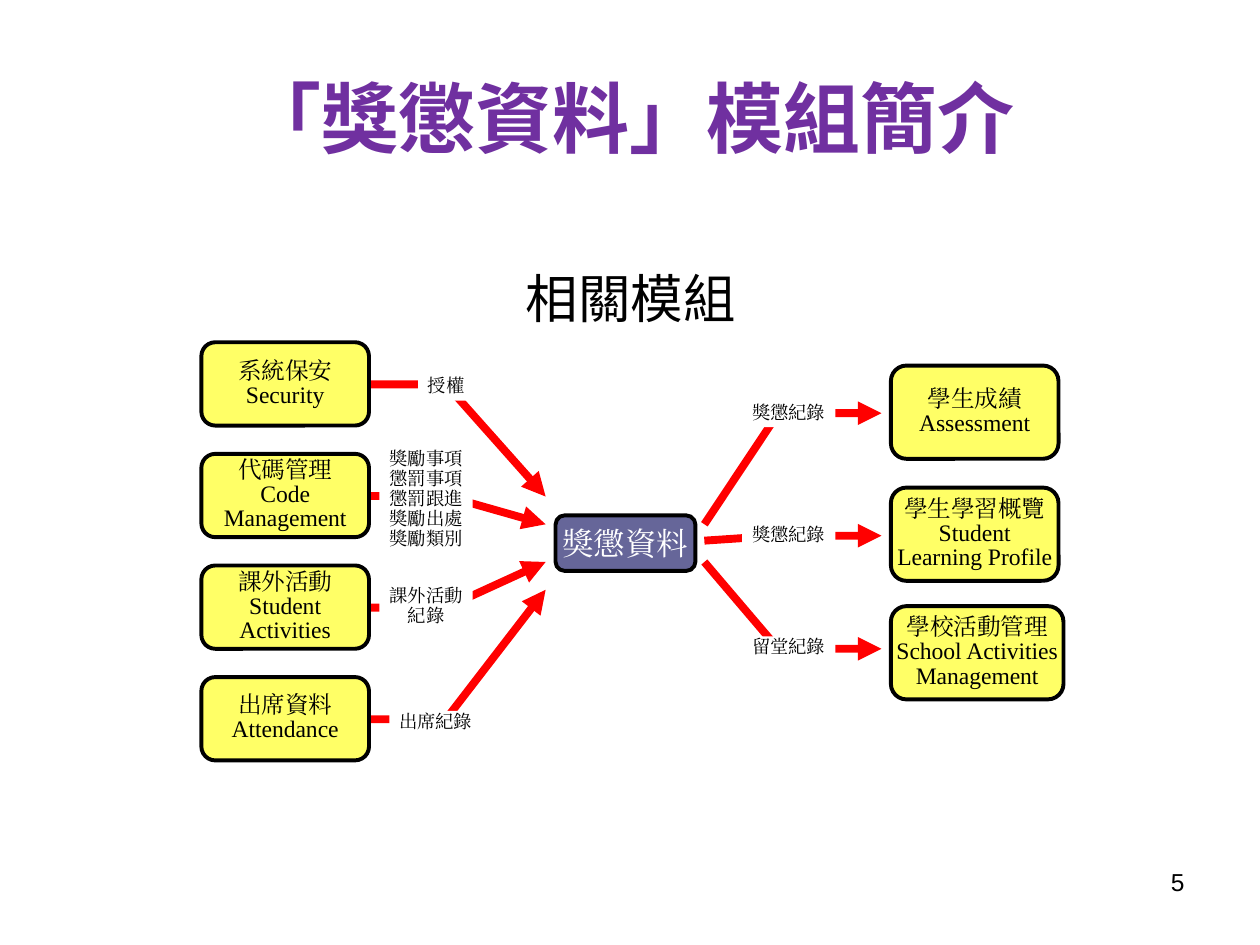
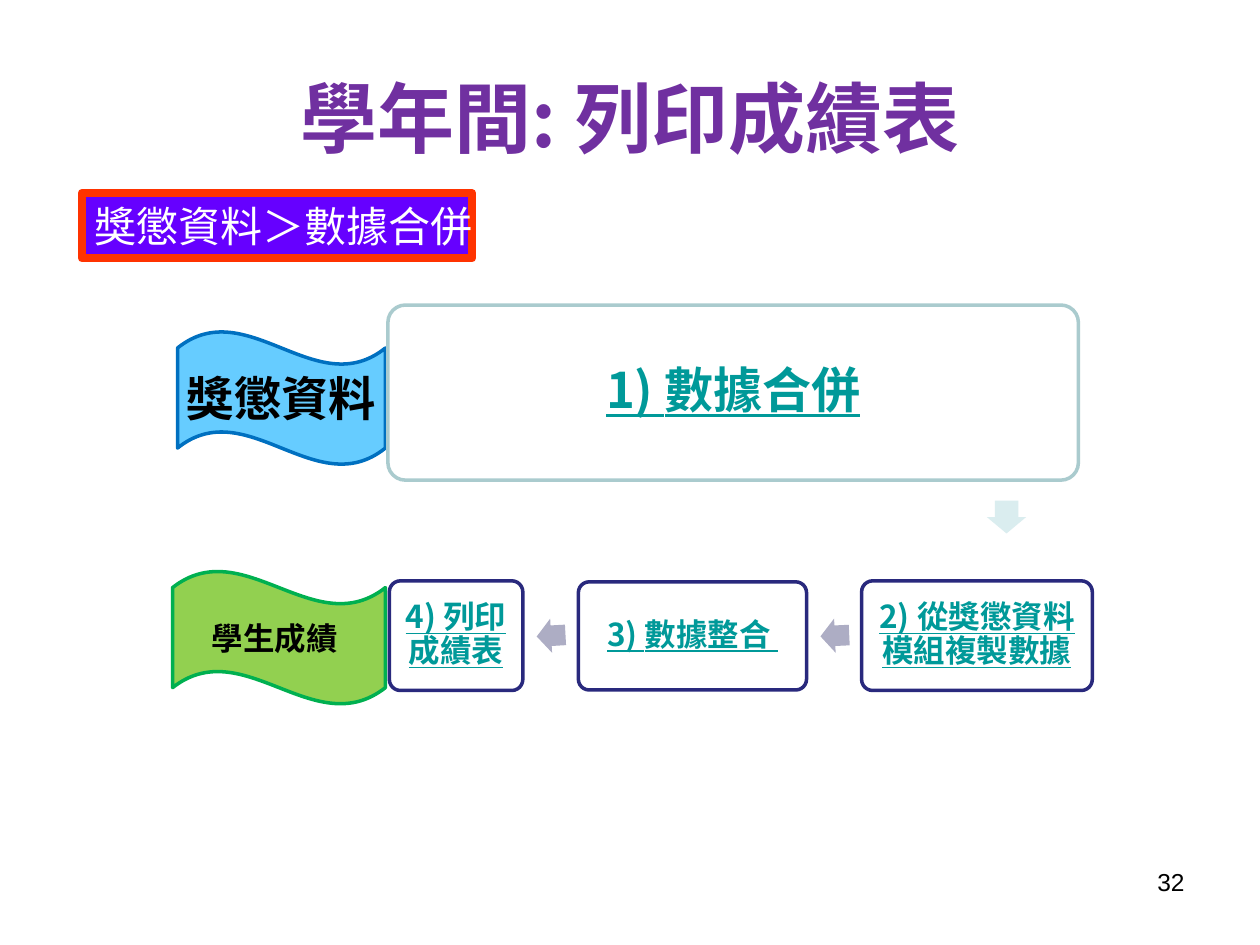
import pptx
import pptx.dml.color
import pptx.enum.shapes
import pptx.enum.text
import pptx.oxml
import pptx.oxml.ns
import pptx.util

Cm = pptx.util.Cm
Pt = pptx.util.Pt
RGB = pptx.dml.color.RGBColor.from_string
PRESET = pptx.enum.shapes.MSO_SHAPE
ALIGN = pptx.enum.text.PP_ALIGN
ANCHOR = pptx.enum.text.MSO_ANCHOR

COLORS = {
    "black": "000000", "white": "FFFFFF", "title": "7030A0", "arrow": "FF0000",
    "module": "FFFF66", "hub": "666699", "banner": "6600FF", "banner_edge": "FF3300",
    "sky": "66CCFF", "sky_edge": "0070C0", "green": "92D050", "green_edge": "00B050",
    "panel_edge": "AACBCE", "step_edge": "29297D", "link": "009999",
    "step_arrow": "ADADC4", "down_arrow": "DAEDEF",
}
SANS = "Noto Sans CJK SC"
SANS_TC = "Noto Sans CJK TC"
SERIF = "Times New Roman"


def write(shape, text, size, font=SERIF, color="black", align=ALIGN.CENTER,
          anchor=ANCHOR.TOP, inset=(0.18, 0.1), spacing=1.0, bold=False,
          underline=False, wrap=True):
    frame = shape.text_frame
    frame.word_wrap = wrap
    frame.vertical_anchor = anchor
    frame.margin_left = frame.margin_right = Cm(inset[0])
    frame.margin_top = frame.margin_bottom = Cm(inset[1])
    for index, line in enumerate(text.split("\n")):
        paragraph = frame.paragraphs[0] if index == 0 else frame.add_paragraph()
        paragraph.alignment = align
        paragraph.line_spacing = spacing
        run = paragraph.add_run()
        run.text = line
        run.font.name = font
        run.font.size = Pt(size)
        run.font.bold = bold
        run.font.underline = underline
        run.font.color.rgb = RGB(COLORS[color])
        east_asian = pptx.oxml.parse_xml(
            f'<a:ea {pptx.oxml.ns.nsdecls("a")} typeface="{font}"/>')
        run.font._element.find(pptx.oxml.ns.qn("a:latin")).addnext(east_asian)


def draw(slide, preset, box, fill, edge=None, weight=2.25, adjust=(), rotation=0):
    shape = slide.shapes.add_shape(preset, *map(Cm, box))
    shape.shadow.inherit = False
    shape.fill.solid()
    shape.fill.fore_color.rgb = RGB(COLORS[fill])
    if edge:
        shape.line.color.rgb = RGB(COLORS[edge])
        shape.line.width = Pt(weight)
    else:
        shape.line.fill.background()
    for index, value in enumerate(adjust):
        shape.adjustments[index] = value
    shape.rotation = rotation
    return shape


deck = pptx.Presentation()
deck.slide_width, deck.slide_height = Cm(25.4), Cm(19.05)

slides = []
for heading, number in [("「獎懲資料」模組簡介", "5"), ("學年間: 列印成績表", "32")]:
    slide = deck.slides.add_slide(deck.slide_layouts[6])
    title = slide.shapes.add_textbox(Cm(1.27), Cm(0.76), Cm(22.86), Cm(3.18))
    write(title, heading, 44, font=SANS, color="title", bold=True,
          anchor=ANCHOR.MIDDLE, inset=(0.25, 0.13))
    page = slide.shapes.add_textbox(Cm(18.21), Cm(17.35), Cm(5.92), Cm(1.32))
    write(page, number, 14, font="Arial", align=ALIGN.RIGHT, inset=(0.25, 0.13))
    slides.append(slide)
overview, report = slides

subtitle = overview.shapes.add_textbox(Cm(3.56), Cm(5.26), Cm(18.31), Cm(1.47))
write(subtitle, "相關模組", 30, font="Roboto")

source_tops = [6.9 + 2.25 * row for row in range(4)]
flows = [[(6.15, top + 0.85), (8.99, top + 0.85), (11, hub_y)]
         for top, hub_y in zip(source_tops, [10.01, 10.57, 11.33, 11.89])]
flows += [[(14.2, hub_y), (15.69, y), (17.77, y)]
          for hub_y, y in [(10.57, 8.33), (10.9, 10.8), (11.33, 13.08)]]
for flow in flows:
    start, *rest = [(Cm(x), Cm(y)) for x, y in flow]
    builder = overview.shapes.build_freeform(*start, scale=1.0)
    builder.add_line_segments(rest, close=False)
    arrow = builder.convert_to_shape()
    arrow.shadow.inherit = False
    arrow.fill.background()
    arrow.line.color.rgb = RGB(COLORS["arrow"])
    arrow.line.width = Pt(4.5)
    arrow.line._get_or_add_ln().append(pptx.oxml.parse_xml(
        f'<a:tailEnd {pptx.oxml.ns.nsdecls("a")} type="triangle"/>'))

source_names = ["系統保安\nSecurity", "代碼管理\nCode\nManagement",
                "課外活動\nStudent\nActivities", "出席資料\nAttendance"]
modules = [(name, (4.06, top, 3.38, 1.68)) for name, top in zip(source_names, source_tops)]
modules += [
    ("學生成績\nAssessment", (17.96, 7.37, 3.38, 1.88)),
    ("學生學習概覽\nStudent\nLearning Profile", (17.96, 9.83, 3.38, 1.88)),
    ("學校活動管理\n School Activities \nManagement", (17.96, 12.22, 3.48, 1.88)),
]
for name, box in modules:
    module = draw(overview, PRESET.ROUNDED_RECTANGLE, box, "module", "black")
    write(module, name, 13.5, anchor=ANCHOR.MIDDLE, spacing=0.85, wrap=False)

hub = draw(overview, PRESET.ROUNDED_RECTANGLE, (11.2, 10.39, 2.82, 1.12), "hub", "black")
write(hub, "獎懲資料", 18, color="white", anchor=ANCHOR.MIDDLE, wrap=False)

for text, box, spacing in [
    ("授權 ", (8.43, 7.57, 1.22, 0.51), 0.7),
    ("獎勵事項\n懲罰事項 \n懲罰跟進\n獎勵出處\n獎勵類別 ", (7.65, 8.97, 1.88, 2.21), 0.9),
    ("課外活動 紀錄", (7.65, 11.73, 1.88, 1.02), 0.9),
    ("出席紀錄 ", (7.85, 14.33, 1.96, 0.51), 0.7),
    ("獎懲紀錄", (14.96, 8.1, 1.88, 0.51), 0.7),
    ("獎懲紀錄", (14.96, 10.57, 1.88, 0.51), 0.7),
    ("留堂紀錄 ", (14.96, 12.83, 1.88, 0.51), 0.7),
]:
    record = draw(overview, PRESET.RECTANGLE, box, "white")
    write(record, text, 10.5, spacing=spacing)

banner = draw(report, PRESET.RECTANGLE, (1.65, 3.89, 7.87, 1.32), "banner",
              "banner_edge", 4.5)
write(banner, "獎懲資料＞數據合併", 24, font=SANS, color="white", align=ALIGN.RIGHT,
      anchor=ANCHOR.MIDDLE, inset=(0, 0.1), wrap=False)

for name, box, fill, size in [
    ("獎懲資料", (3.58, 6.68, 4.19, 2.69), "sky", 27),
    ("學生成績 ", (3.48, 11.51, 4.29, 2.69), "green", 18),
]:
    flag = draw(report, PRESET.WAVE, box, fill, fill + "_edge", 2)
    write(flag, name, size, font="Arial", bold=True, anchor=ANCHOR.MIDDLE)

for text, box, edge, size, margin in [
    ("1) 數據合併", (7.82, 6.15, 13.92, 3.53), "panel_edge", 28, 0.3),
    ("4) 列印成績表", (7.85, 11.71, 2.69, 2.21), "step_edge", 18, 0.18),
    ("3) 數據整合 ", (11.66, 11.73, 4.6, 2.18), "step_edge", 18, 0.18),
    ("2) 從獎懲資料模組複製數據", (17.37, 11.71, 4.65, 2.21), "step_edge", 18, 0.18),
]:
    step = draw(report, PRESET.ROUNDED_RECTANGLE, box, "white", edge, 2, adjust=[0.1])
    write(step, text, size, font=SANS_TC, color="link", bold=True, underline=True,
          anchor=ANCHOR.MIDDLE, inset=(margin, margin), spacing=0.9)

for box, fill, rotation in [
    ((10.82, 12.47, 0.58, 0.69), "step_arrow", 176.8),
    ((16.54, 12.47, 0.58, 0.69), "step_arrow", 177.4),
    ((19.96, 10.03, 0.66, 0.79), "down_arrow", 90),
]:
    draw(report, PRESET.RIGHT_ARROW, box, fill, adjust=[0.6, 0.5], rotation=rotation)

deck.save("out.pptx")
